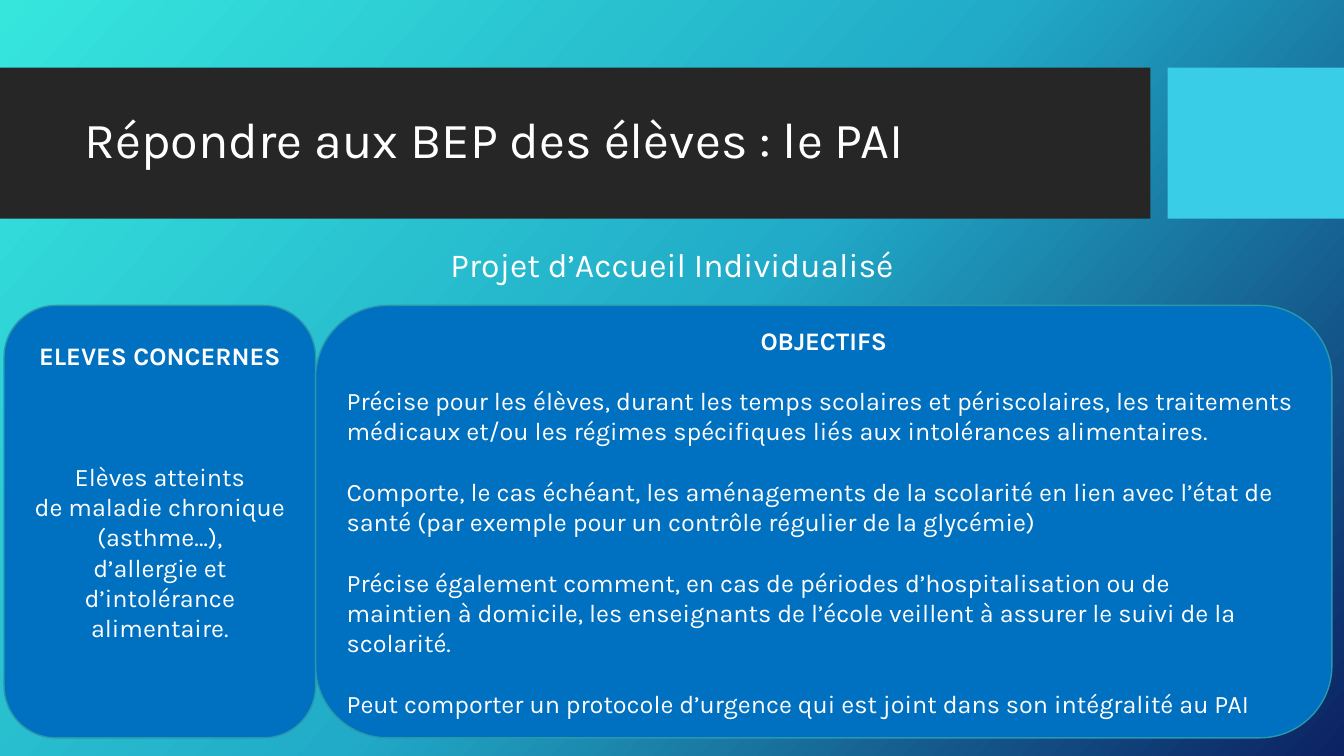
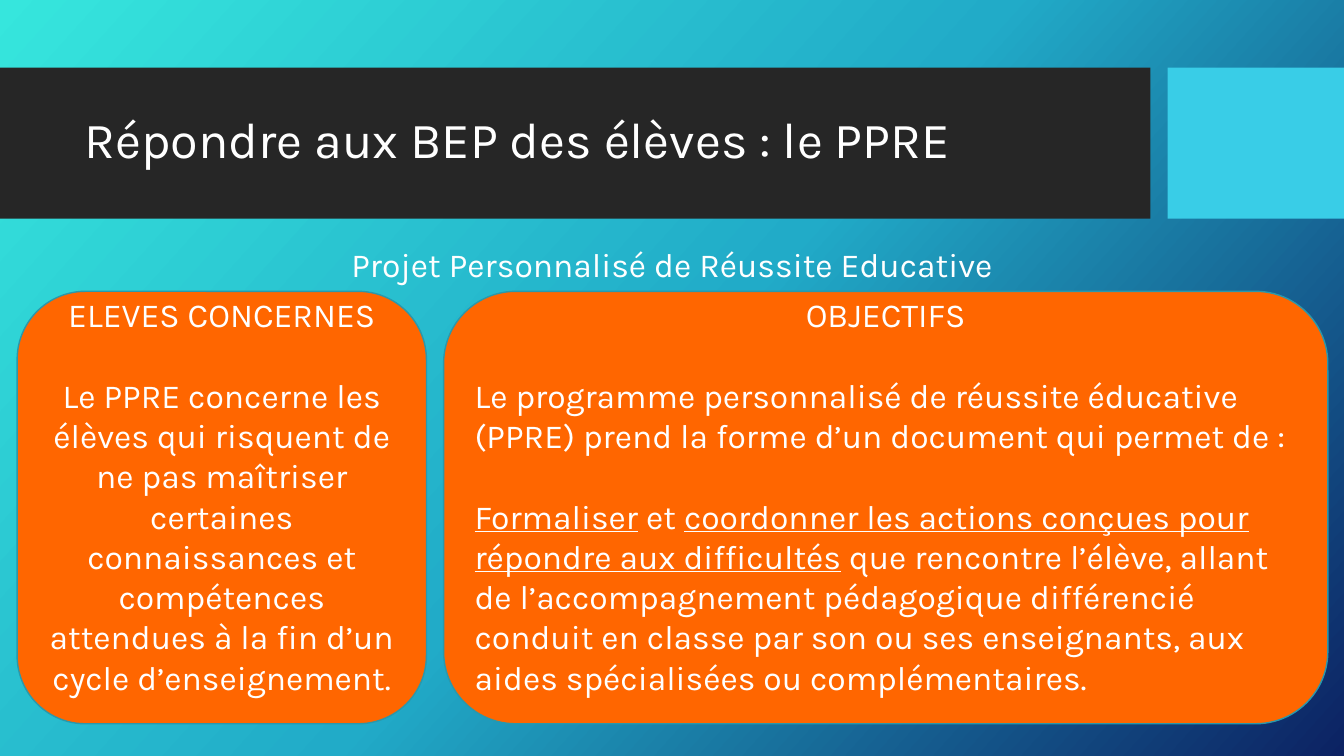
import copy
from dataclasses import dataclass

import pptx
import pptx.dml.color
import pptx.enum.shapes
import pptx.enum.text
import pptx.oxml.ns
import pptx.util

Inches = pptx.util.Inches
Pt = pptx.util.Pt
ALIGN = pptx.enum.text.PP_ALIGN
ANCHOR = pptx.enum.text.MSO_ANCHOR
SHAPE = pptx.enum.shapes.MSO_SHAPE


@dataclass(frozen=True)
class Theme:
    font: str = "Karla"
    text: str = "FFFFFF"
    band: str = "262626"
    accent: str = "39CDE7"
    card_border: str = "2A98AB"
    blue: str = "0070C0"
    orange: str = "FF6600"
    backdrop: tuple = ((0, "36E6DD"), (0.5, "21ABC8"), (1, "0C2263"))
    backdrop_angle: int = 42
    title_size: int = 36
    subtitle_size: int = 24
    line_height: float = 1.2


THEME = Theme()

# Body paragraphs: (blank lines above, pieces); a piece is (text, underlined).
# "lift" raises the text above the middle of its card, in inches.
SLIDES = [
    {
        "title": "Répondre aux BEP des élèves : le PAI",
        "subtitle": "Projet d’Accueil Individualisé",
        "fill": THEME.blue, "size": 18, "bold_heading": True, "top": 3.03,
        "cards": [
            {
                "heading": "ELEVES CONCERNES",
                "left": 0.04, "width": 3.09, "lift": 0.3, "align": ALIGN.CENTER,
                "body": [
                    (3, [("Elèves atteints", False)]),
                    (0, [("de maladie chronique (asthme…),", False)]),
                    (0, [("d’allergie et d’intolérance alimentaire.", False)]),
                ],
            },
            {
                "heading": "OBJECTIFS",
                "left": 3.13, "width": 10.08, "lift": 0, "align": ALIGN.LEFT,
                "body": [
                    (1, [("Précise pour les élèves, durant les temps scolaires et "
                          "périscolaires, les traitements médicaux et/ou les régimes "
                          "spécifiques liés aux intolérances alimentaires.", False)]),
                    (1, [("Comporte, le cas échéant, les aménagements de la scolarité "
                          "en lien avec l’état de santé (par exemple pour un contrôle "
                          "régulier de la glycémie)", False)]),
                    (1, [("Précise également comment, en cas de périodes "
                          "d’hospitalisation ou de", False)]),
                    (0, [("maintien à domicile, les enseignants de l’école veillent à "
                          "assurer le suivi de la scolarité.", False)]),
                    (1, [("Peut comporter un protocole d’urgence qui est joint dans "
                          "son intégralité au PAI", False)]),
                ],
            },
        ],
    },
    {
        "title": "Répondre aux BEP des élèves : le PPRE",
        "subtitle": "Projet Personnalisé de Réussite Educative",
        "fill": THEME.orange, "size": 24, "bold_heading": False, "top": 2.89,
        "cards": [
            {
                "heading": "ELEVES CONCERNES",
                "left": 0.17, "width": 4.06, "lift": 0.12, "align": ALIGN.CENTER,
                "body": [
                    (1, [("Le PPRE concerne les élèves qui risquent de ne pas "
                          "maîtriser certaines connaissances et compétences attendues "
                          "à la fin d’un cycle d’enseignement.", False)]),
                ],
            },
            {
                "heading": "OBJECTIFS",
                "left": 4.4, "width": 8.77, "lift": 0.12, "align": ALIGN.LEFT,
                "body": [
                    (1, [("Le programme personnalisé de réussite éducative (PPRE) "
                          "prend la forme d’un document qui permet de :", False)]),
                    (1, [("Formaliser", True),
                         (" et ", False),
                         ("coordonner les actions conçues pour répondre aux "
                          "difficultés", True),
                         (" que rencontre l’élève, allant de l’accompagnement "
                          "pédagogique différencié conduit en classe par son ou ses "
                          "enseignants, aux aides spécialisées ou complémentaires.",
                          False)]),
                ],
            },
        ],
    },
]

CARD_HEIGHT = 4.29
CARD_INSET = 0.05


def rgb(code):
    return pptx.dml.color.RGBColor.from_string(code)


def paint_backdrop(master):
    fill = master.background.fill
    fill.gradient()
    fill.gradient_angle = 360 - THEME.backdrop_angle
    stop_list = master.element.find(".//" + pptx.oxml.ns.qn("a:gsLst"))
    while len(stop_list) < len(THEME.backdrop):
        stop_list.append(copy.deepcopy(stop_list[0]))
    for stop, (position, color) in zip(fill.gradient_stops, THEME.backdrop):
        stop.position = position
        stop.color.rgb = rgb(color)


def write(paragraph, text, *, size, bold=False, underline=False,
          align=ALIGN.LEFT, line_spacing=None, blank_lines=0):
    """Append one formatted run and set the format of its paragraph."""
    paragraph.alignment = align
    paragraph.line_spacing = line_spacing
    if blank_lines:
        paragraph.space_before = Pt(blank_lines * size * THEME.line_height)
    run = paragraph.add_run()
    run.text = text
    run.font.name = THEME.font
    run.font.size = Pt(size)
    run.font.bold = bold
    run.font.underline = underline
    run.font.color.rgb = rgb(THEME.text)


def add_panel(slide, kind, left, top, width, height, fill, border=None):
    panel = slide.shapes.add_shape(
        kind, Inches(left), Inches(top), Inches(width), Inches(height))
    panel.shadow.inherit = False
    panel.fill.solid()
    panel.fill.fore_color.rgb = rgb(fill)
    if border:
        panel.line.color.rgb = rgb(border)
        panel.line.width = Pt(1)
    else:
        panel.line.fill.background()
    return panel


def add_label(slide, text, left, top, width, height, anchor=ANCHOR.TOP, **text_format):
    frame = slide.shapes.add_textbox(
        Inches(left), Inches(top), Inches(width), Inches(height)).text_frame
    frame.word_wrap = True
    frame.vertical_anchor = anchor
    write(frame.paragraphs[0], text, **text_format)


def add_header(slide, title, subtitle):
    add_panel(slide, SHAPE.RECTANGLE, 0, 0.67, 11.41, 1.5, THEME.band)
    add_panel(slide, SHAPE.RECTANGLE, 11.58, 0.67, 1.75, 1.5, THEME.accent)
    add_label(slide, title, 0.74, 0.82, 10.51, 1.18, anchor=ANCHOR.MIDDLE,
              size=THEME.title_size, line_spacing=0.9)
    add_label(slide, subtitle, 2.87, 2.01, 7.59, 0.88,
              size=THEME.subtitle_size, align=ALIGN.CENTER, line_spacing=1.9)


def add_card(slide, card, content):
    frame = add_panel(slide, SHAPE.ROUNDED_RECTANGLE, card["left"], content["top"],
                      card["width"], CARD_HEIGHT, content["fill"],
                      THEME.card_border).text_frame
    frame.word_wrap = True
    frame.vertical_anchor = ANCHOR.MIDDLE
    frame.margin_top = Inches(CARD_INSET)
    frame.margin_bottom = Inches(CARD_INSET + 2 * card["lift"])
    write(frame.paragraphs[0], card["heading"], size=content["size"],
          bold=content["bold_heading"], align=ALIGN.CENTER)
    for blank_lines, pieces in card["body"]:
        paragraph = frame.add_paragraph()
        for text, underline in pieces:
            write(paragraph, text, size=content["size"], underline=underline,
                  align=card["align"], blank_lines=blank_lines)


def main():
    deck = pptx.Presentation()
    deck.slide_width, deck.slide_height = Inches(13.33), Inches(7.5)
    paint_backdrop(deck.slide_master)
    blank_layout = deck.slide_layouts[6]
    for content in SLIDES:
        slide = deck.slides.add_slide(blank_layout)
        add_header(slide, content["title"], content["subtitle"])
        for card in content["cards"]:
            add_card(slide, card, content)
    deck.save("out.pptx")


if __name__ == "__main__":
    main()
